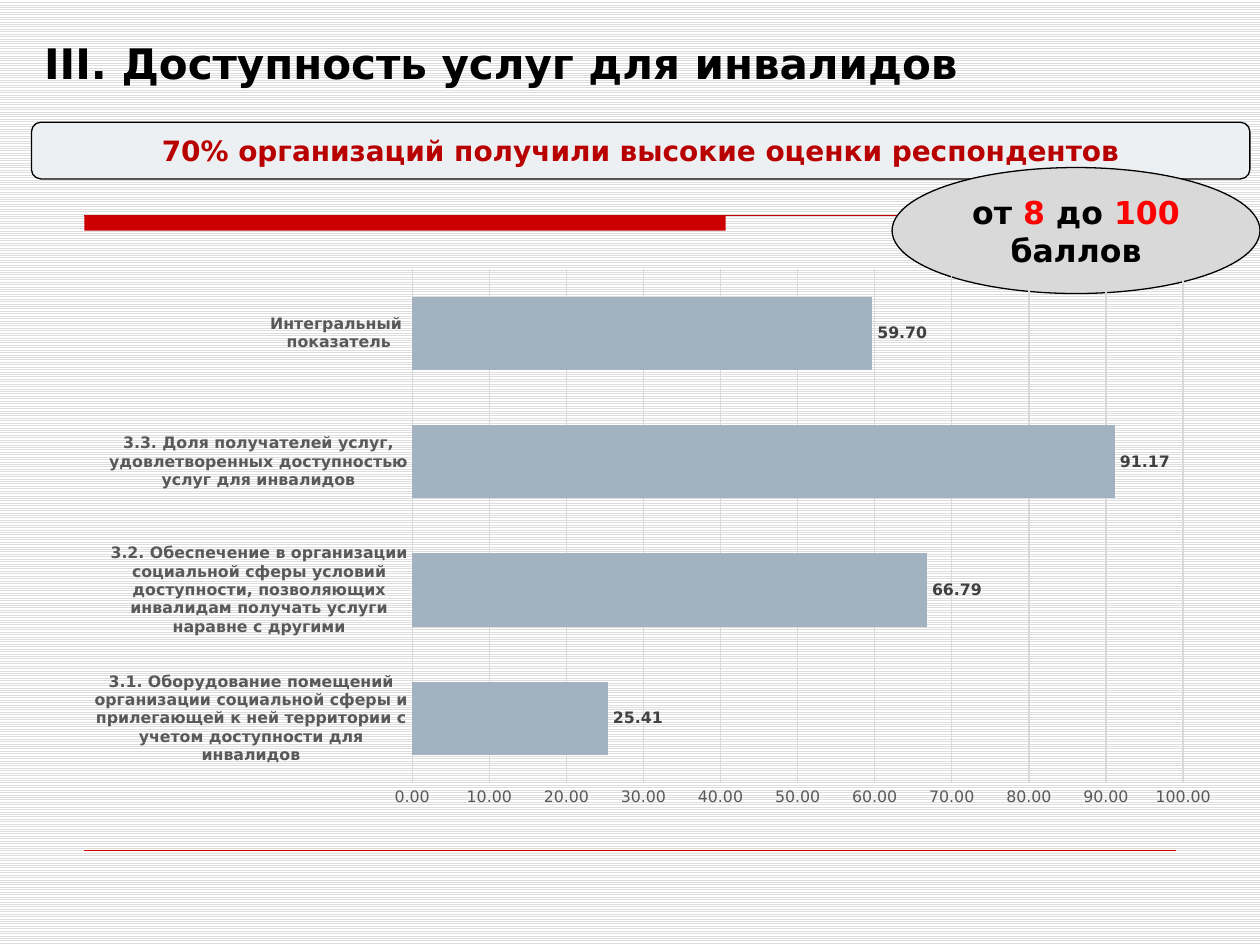
"""Builds a slide on how accessible services are for people with disabilities."""
from lxml import etree
from pptx import Presentation
from pptx import util as u
from pptx.chart.data import CategoryChartData
from pptx.dml.color import RGBColor
from pptx.enum import chart as ch, dml, shapes, text
from pptx.oxml.ns import qn

THEME = dict(
    font="DejaVu Sans", title=24, banner=16, badge=18, chart=10, label=9,
    black="000000", white="FFFFFF", stripe="DDDDDD", red="CC0000",
    deep_red="B90000", bright_red="FF0000", pale="EDF0F3", grey="D9D9D9",
    bar="A3B2C1", axis="595959", value="404040",
)
TITLE = "III. Доступность услуг для инвалидов"
BANNER = "70% организаций получили высокие оценки респондентов"
BADGE = [("от", "black"), (" 8 ", "bright_red"), ("до ", "black"),
         ("100", "bright_red"), (" баллов", "black")]
SCORES = [
    ("3.1. Оборудование помещений организации социальной сферы и прилегающей "
     "к ней территории с учетом доступности для инвалидов", 25.41),
    ("3.2. Обеспечение в организации социальной сферы условий доступности, "
     "позволяющих инвалидам получать услуги наравне с другими", 66.79),
    ("3.3. Доля получателей услуг, удовлетворенных доступностью услуг "
     "для инвалидов", 91.17),
    ("Интегральный \nпоказатель", 59.7),
]
PLOT = dict(layoutTarget="inner", xMode="edge", yMode="edge",
            x=0.28, y=0.03, w=0.68, h=0.89)


def rgb(name):
    return RGBColor.from_string(THEME[name])


def box(*lengths):
    return [u.Inches(v) for v in lengths]


def assign(obj, **values):
    for name, value in values.items():
        setattr(obj, name, value)


def style(font, size, color, bold=True):
    assign(font, name=THEME["font"], size=u.Pt(THEME[size]), bold=bold)
    font.color.rgb = rgb(color)


def write(sp, runs, size, align, anchor):
    tf = sp.text_frame
    assign(tf, word_wrap=True, vertical_anchor=anchor, auto_size=text.MSO_AUTO_SIZE.NONE)
    p = tf.paragraphs[0]
    p.alignment = align
    for content, color in runs:
        r = p.add_run()
        r.text = content
        style(r.font, size, color)


def add_shape(s, kind, at, fill, line=None):
    sp = s.shapes.add_shape(kind, *box(*at))
    sp.shadow.inherit = False
    sp.fill.solid()
    sp.fill.fore_color.rgb = rgb(fill)
    if line:
        sp.line.color.rgb = rgb(line)
        sp.line.width = u.Pt(0.75)
    else:
        sp.line.fill.background()
    return sp


def add_rule(s, left, right, y, width):
    sp = s.shapes.add_connector(shapes.MSO_CONNECTOR.STRAIGHT, *box(left, y, right, y))
    sp.line.color.rgb = rgb("red")
    sp.line.width = u.Pt(width)
    etree.SubElement(sp._element.spPr, qn("a:effectLst"))


def set_plot_area(chart):
    area = chart._chartSpace.chart.plotArea
    for old in area.findall(qn("c:layout")):
        area.remove(old)
    layout = etree.Element(qn("c:layout"))
    manual = etree.SubElement(layout, qn("c:manualLayout"))
    for name, value in PLOT.items():
        etree.SubElement(manual, qn("c:" + name)).set("val", str(value))
    area.insert(0, layout)


def add_scores(s):
    data = CategoryChartData(number_format="0.00")
    data.categories = [name for name, _ in SCORES]
    data.add_series("Series 1", [score for _, score in SCORES])
    chart = s.shapes.add_chart(ch.XL_CHART_TYPE.BAR_CLUSTERED,
                               *box(0.75, 2, 9, 4.58), data).chart
    assign(chart, has_legend=False, has_title=False)
    style(chart.font, "chart", "black", False)
    set_plot_area(chart)

    plot = chart.plots[0]
    assign(plot, gap_width=75, overlap=40, vary_by_categories=False, has_data_labels=True)
    fill = plot.series[0].format.fill
    fill.solid()
    fill.fore_color.rgb = rgb("bar")
    labels = plot.data_labels
    assign(labels, show_value=True, number_format="0.00", number_format_is_linked=False,
           position=ch.XL_LABEL_POSITION.OUTSIDE_END)
    style(labels.font, "label", "value")

    cat, val = chart.category_axis, chart.value_axis
    for axis, bold in ((cat, True), (val, False)):
        assign(axis, major_tick_mark=ch.XL_TICK_MARK.NONE,
               minor_tick_mark=ch.XL_TICK_MARK.NONE)
        style(axis.tick_labels.font, "label", "axis", bold)
    assign(val, minimum_scale=0, maximum_scale=100, major_unit=10, has_major_gridlines=True)
    assign(val.tick_labels, number_format="0.00", number_format_is_linked=False)
    val.format.line.fill.background()
    for line in (cat.format.line, val.major_gridlines.format.line):
        line.color.rgb = rgb("grey")
        line.width = u.Pt(0.75)


def main():
    prs = Presentation()
    assign(prs, slide_width=u.Inches(10), slide_height=u.Inches(7.5))
    s = prs.slides.add_slide(prs.slide_layouts[5])
    fill = s.background.fill
    fill.patterned()
    fill.pattern = dml.MSO_PATTERN.LIGHT_HORIZONTAL
    fill.fore_color.rgb, fill.back_color.rgb = rgb("stripe"), rgb("white")

    add_shape(s, shapes.MSO_SHAPE.RECTANGLE, (0.67, 1.71, 5.09, 0.12), "red")
    add_rule(s, 0.67, 9.37, 1.71, 0.75)
    add_rule(s, 0.67, 9.33, 6.75, 0.25)

    title = s.shapes.title
    assign(title, **dict(zip(("left", "top", "width", "height"), box(0.25, 0.17, 7.67, 0.58))))
    write(title, [(TITLE, "black")], "title", text.PP_ALIGN.LEFT, text.MSO_ANCHOR.BOTTOM)

    center, middle = text.PP_ALIGN.CENTER, text.MSO_ANCHOR.MIDDLE
    banner = add_shape(s, shapes.MSO_SHAPE.ROUNDED_RECTANGLE,
                       (0.25, 0.97, 9.67, 0.45), "pale", "black")
    write(banner, [(BANNER, "deep_red")], "banner", center, middle)
    badge = add_shape(s, shapes.MSO_SHAPE.OVAL, (7.08, 1.33, 2.92, 1), "grey", "black")
    write(badge, BADGE, "badge", center, middle)
    add_scores(s)
    prs.save("out.pptx")


if __name__ == "__main__":
    main()
